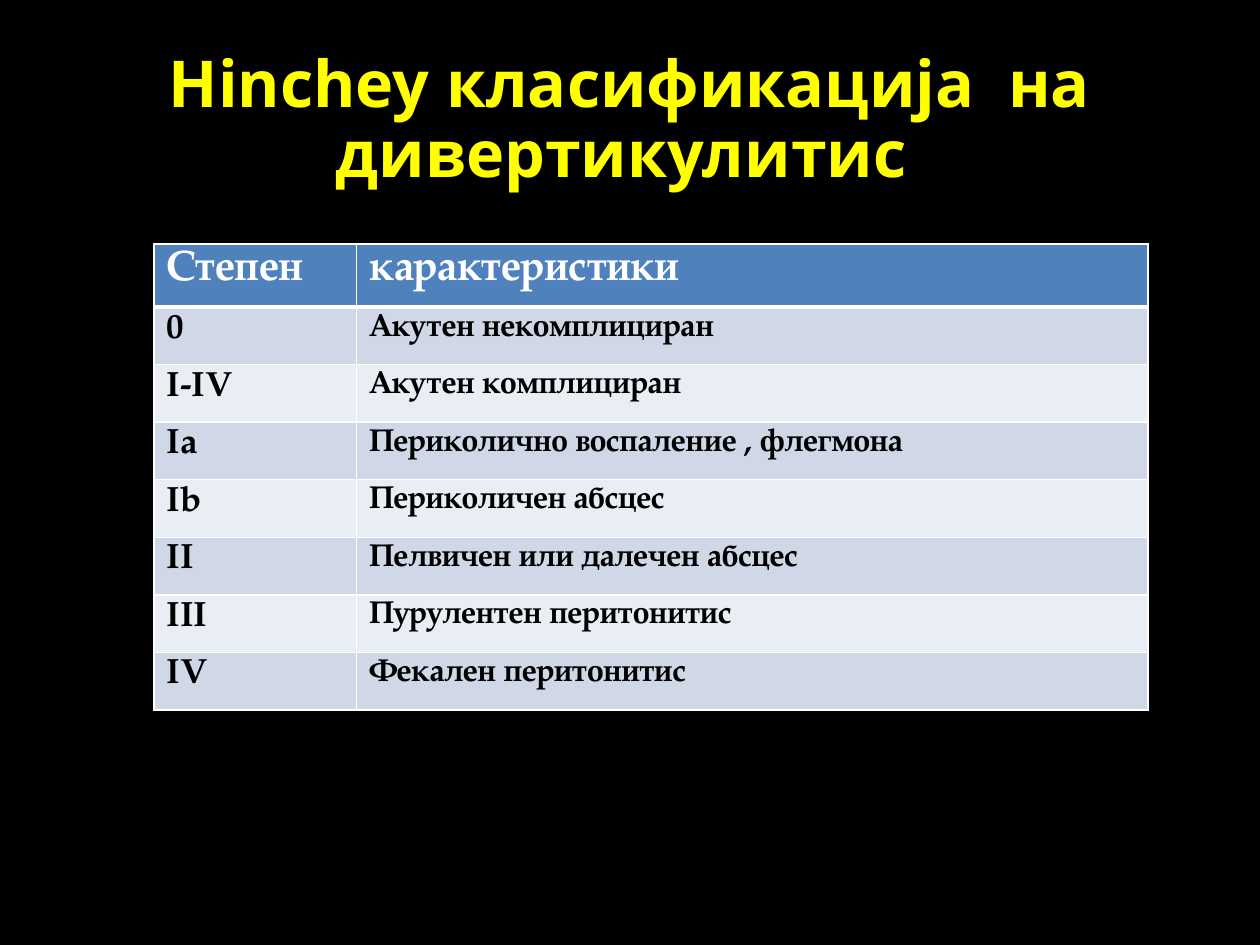
import pptx
import pptx.util
import pptx.dml.color
import pptx.enum.text
import pptx.oxml
import pptx.oxml.ns
from dataclasses import dataclass
from pptx.util import Cm


@dataclass(frozen=True)
class Theme:
    background: str = "000000"
    title: str = "FFFF00"
    header: str = "4F81BD"
    header_text: str = "FFFFFF"
    bands: tuple = ("D0D8E8", "E9EDF4")
    body_text: str = "000000"
    border: str = "FFFFFF"
    title_font: str = "Open Sans"
    table_font: str = "TeX Gyre Pagella"
    title_size: float = 36.9
    header_size: int = 24
    column_sizes: tuple = (20, 18)


THEME = Theme()
TITLE = "Hinchey класификација  на дивертикулитис "
ROWS = [
    ("Степен", "карактеристики"),
    ("0", "Акутен некомплициран"),
    ("I-IV", "Акутен комплициран"),
    ("Ia", "Периколично воспаление , флегмона"),
    ("Ib", "Периколичен абсцес"),
    ("II", "Пелвичен или далечен абсцес"),
    ("III", "Пурулентен перитонитис"),
    ("IV", "Фекален перитонитис"),
]


def rgb(color):
    return pptx.dml.color.RGBColor.from_string(color)


def format_runs(p, font, size, color):
    for r in p.runs:
        r.font.name = font
        r.font.size = pptx.util.Pt(size)
        r.font.bold = True
        r.font.color.rgb = rgb(color)


def set_borders(cell, **widths):
    """Draw the cell's borders; widths in points by side: L, R, T, B."""
    tcPr = cell._tc.get_or_add_tcPr()
    for side in "LRTB":
        width = pptx.util.Pt(widths.get(side, 1))
        tcPr.append(pptx.oxml.parse_xml(
            f'<a:ln{side} {pptx.oxml.ns.nsdecls("a")} w="{width}">'
            f'<a:solidFill><a:srgbClr val="{THEME.border}"/></a:solidFill>'
            f'</a:ln{side}>'))


def add_title(s, left, top, width, height):
    tf = s.shapes.add_textbox(left, top, width, height).text_frame
    tf.word_wrap = True
    tf.vertical_anchor = pptx.enum.text.MSO_ANCHOR.MIDDLE
    tf.margin_top = Cm(0.33)
    tf.text = TITLE
    p = tf.paragraphs[0]
    p.alignment = pptx.enum.text.PP_ALIGN.CENTER
    p.line_spacing = 0.9
    format_runs(p, THEME.title_font, THEME.title_size, THEME.title)


def add_stage_table(s, left, top, width, height):
    table = s.shapes.add_table(len(ROWS), 2, left, top, width, height).table
    # The stage column is narrow, the description takes the rest
    stage_width = Cm(4.09)
    table.columns[0].width = stage_width
    table.columns[1].width = width - stage_width

    for i, row in enumerate(ROWS):
        is_header = i == 0
        fill = THEME.header if is_header else THEME.bands[(i - 1) % 2]
        color = THEME.header_text if is_header else THEME.body_text
        # Thick rule between the header and the body
        rule = {0: {"B": 3}, 1: {"T": 3}}.get(i, {})
        for j, text in enumerate(row):
            cell = table.cell(i, j)
            set_borders(cell, **rule)
            cell.fill.solid()
            cell.fill.fore_color.rgb = rgb(fill)
            cell.text_frame.text = text
            size = THEME.header_size if is_header else THEME.column_sizes[j]
            format_runs(cell.text_frame.paragraphs[0], THEME.table_font,
                        size, color)


def main():
    prs = pptx.Presentation()
    prs.slide_width, prs.slide_height = Cm(25.4), Cm(19.05)
    s = prs.slides.add_slide(prs.slide_layouts[6])
    s.background.fill.solid()
    s.background.fill.fore_color.rgb = rgb(THEME.background)

    add_title(s, Cm(1.27), Cm(0.76), Cm(22.86), Cm(3.18))
    add_stage_table(s, Cm(3.1), Cm(4.92), Cm(20.04), Cm(9.28))
    prs.save("out.pptx")


if __name__ == "__main__":
    main()
